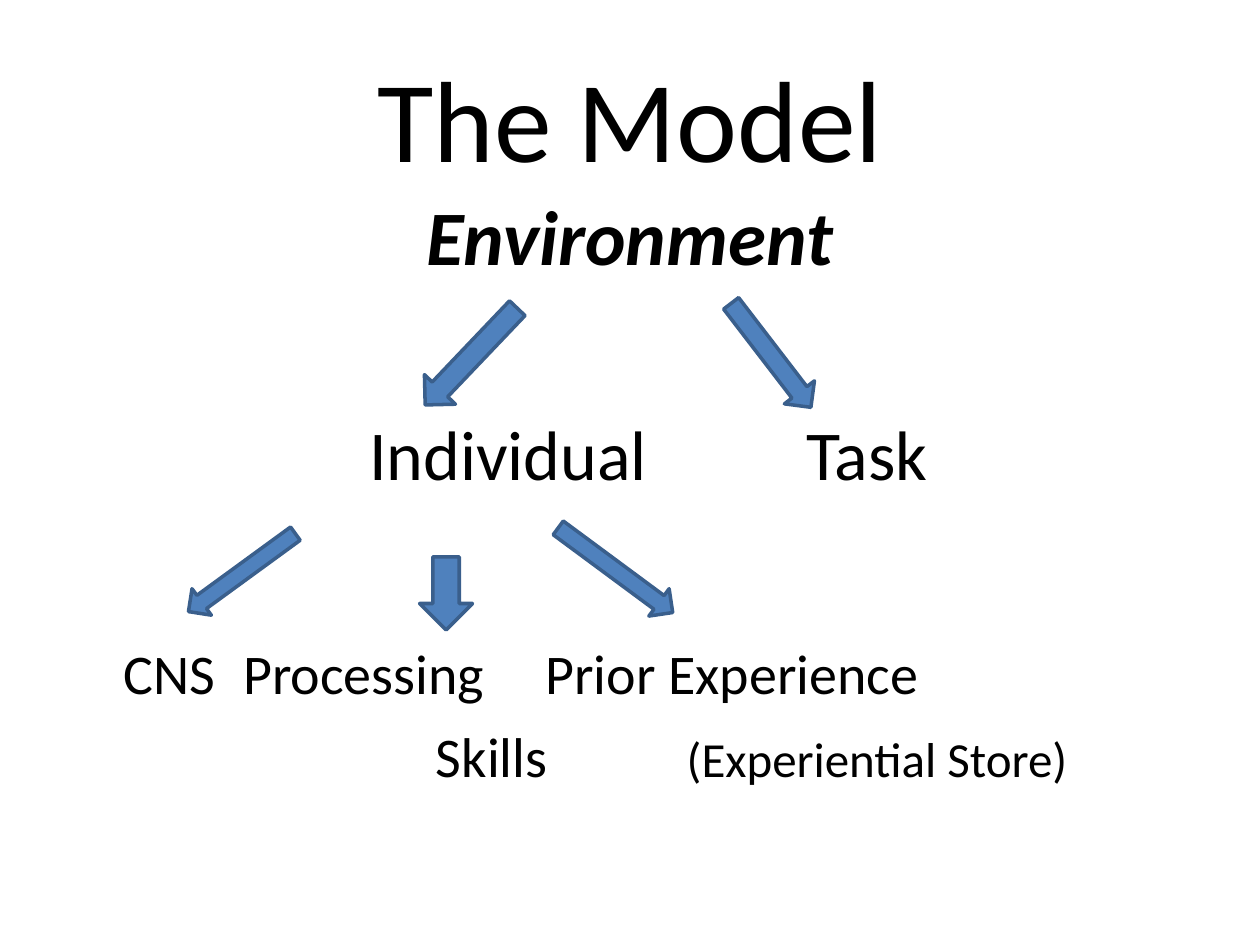
from dataclasses import dataclass

from pptx import Presentation
from pptx import util as u
from pptx.dml.color import RGBColor
from pptx.enum import shapes, text


@dataclass(frozen=True)
class Theme:
    font: str = "Calibri"
    ink: str = "000000"
    paper: str = "FFFFFF"
    arrow_fill: str = "4F81BD"
    arrow_line: str = "3A5F8C"
    arrow_weight: float = 2
    title: int = 66
    root: int = 44
    branch: int = 40
    leaf: int = 32
    note: int = 28


class ModelSlide:
    def __init__(self, deck, theme):
        self.theme = theme
        self.page = deck.slides.add_slide(deck.slide_layouts[5])
        background = self.page.background.fill
        background.solid()
        background.fore_color.rgb = RGBColor.from_string(theme.paper)

    def add_words(self, box, words, size, align, emphasis=False):
        para = box.text_frame.paragraphs[0]
        para.alignment = align
        span = para.add_run()
        span.text = words
        span.font.name = self.theme.font
        span.font.size = u.Pt(size)
        span.font.bold = span.font.italic = emphasis
        span.font.color.rgb = RGBColor.from_string(self.theme.ink)

    def title(self, words):
        box = self.page.shapes.title
        box.left, box.top = u.Inches(0.5), u.Inches(0.3)
        box.width, box.height = u.Inches(9), u.Inches(1.25)
        box.text_frame.vertical_anchor = text.MSO_ANCHOR.MIDDLE
        self.add_words(box, words, self.theme.title, text.PP_ALIGN.CENTER)

    def label(self, words, left, top, width, size,
              align=text.PP_ALIGN.LEFT, emphasis=False):
        height = round(size * 1.22 / 72, 2)
        box = self.page.shapes.add_textbox(
            u.Inches(left), u.Inches(top), u.Inches(width), u.Inches(height))
        frame = box.text_frame
        frame.word_wrap = True
        frame.margin_left = frame.margin_right = 0
        frame.margin_top = frame.margin_bottom = 0
        self.add_words(box, words, size, align, emphasis)

    def arrow(self, left, top, width, height, rotation):
        arrow = self.page.shapes.add_shape(
            shapes.MSO_SHAPE.DOWN_ARROW, u.Inches(left), u.Inches(top),
            u.Inches(width), u.Inches(height))
        arrow.rotation = rotation
        arrow.shadow.inherit = False
        arrow.fill.solid()
        arrow.fill.fore_color.rgb = RGBColor.from_string(self.theme.arrow_fill)
        arrow.line.color.rgb = RGBColor.from_string(self.theme.arrow_line)
        arrow.line.width = u.Pt(self.theme.arrow_weight)


def main():
    deck = Presentation()
    deck.slide_width, deck.slide_height = u.Inches(10), u.Inches(7.5)
    theme = Theme()
    slide = ModelSlide(deck, theme)

    slide.title("The Model")
    slide.label("Environment", 0.5, 1.5, 9, theme.root,
                text.PP_ALIGN.CENTER, emphasis=True)

    labels = [
        ("Individual", 2.93, 3.26, 2.5, theme.branch),
        ("Task", 6.4, 3.26, 1.3, theme.branch),
        ("CNS", 0.98, 5.07, 0.9, theme.leaf),
        ("Processing", 1.93, 5.07, 2.2, theme.leaf),
        ("Prior Experience", 4.33, 5.07, 3.4, theme.leaf),
        ("Skills", 3.46, 5.73, 1.2, theme.leaf),
        ("(Experiential Store)", 5.45, 5.78, 3.4, theme.note),
    ]
    for label in labels:
        slide.label(*label)

    arrows = [
        (3.57, 2.3, 0.34, 1.06, 43.6),
        (5.97, 2.3, 0.3, 1.04, 322.5),
        (1.79, 4.02, 0.26, 1.05, 53.9),
        (3.33, 4.42, 0.42, 0.58, 0),
        (4.75, 3.96, 0.27, 1.13, 306.5),
    ]
    for arrow in arrows:
        slide.arrow(*arrow)

    deck.save("out.pptx")


if __name__ == "__main__":
    main()
